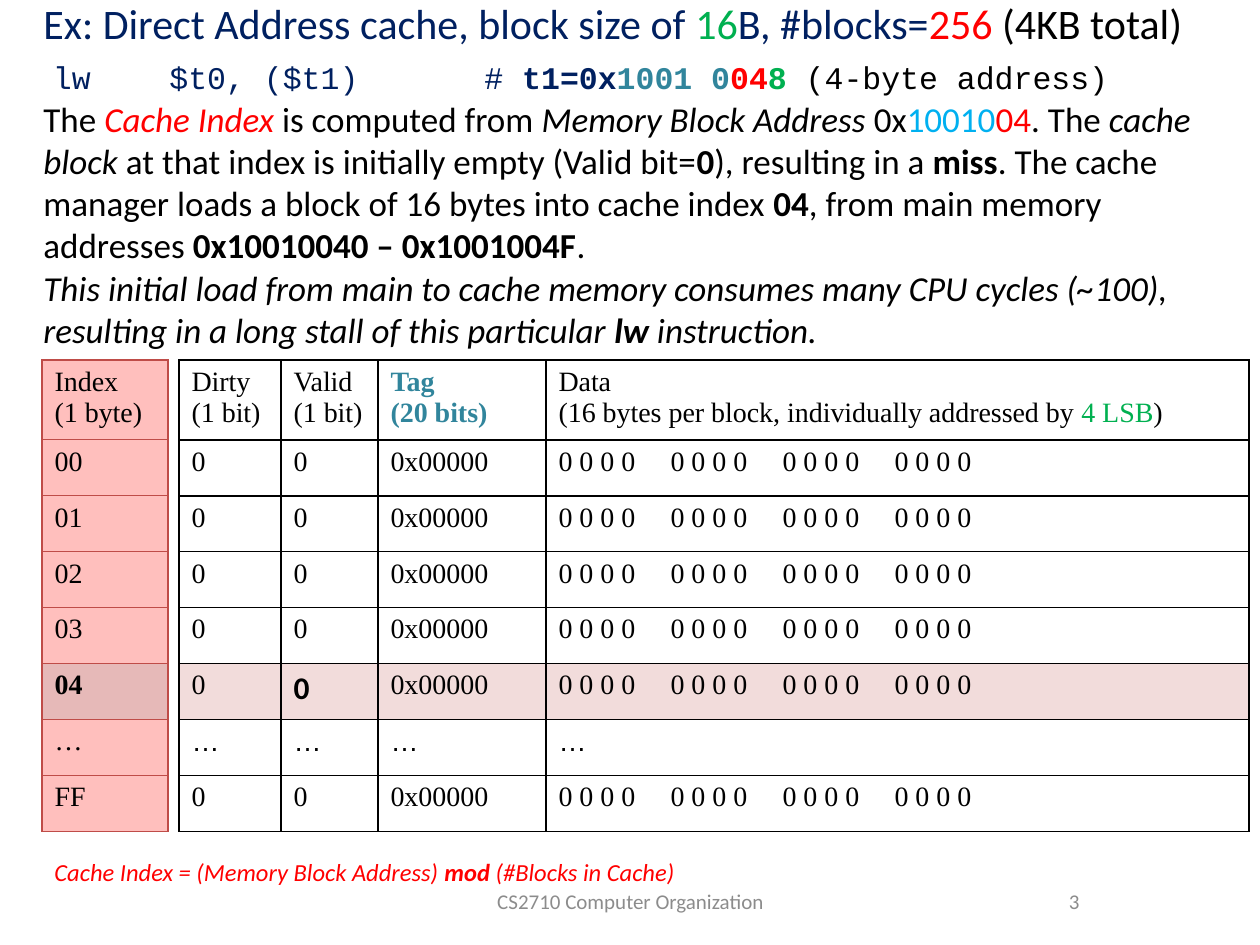
"""Build the slide about a direct address cache and its first miss."""
from lxml.etree import SubElement
from pptx import Presentation
from pptx.dml.color import RGBColor
from pptx.enum.text import MSO_ANCHOR, PP_ALIGN
from pptx.oxml.ns import qn
from pptx.util import Pt

COLORS = {
    "black": "000000", "navy": "002060", "green": "00B050", "red": "FF0000",
    "teal": "31859C", "sky": "00B0F0", "gray": "8C8C8C", "rose": "F2DCDB",
    "pink": "FFBFBD", "dusty": "E6B9B8", "brick": "BF4C48",
}
ROWS = ["00", "01", "02", "03", "04", "…", "FF"]
ROW_HEIGHTS = [75] + [56] * len(ROWS)
DATA = "\t".join(["0 0 0 0"] * 4)
GROUP_STEP = 112


def px(n):
    return round(n * 914400 / 126)


def rgb(name):
    return RGBColor.from_string(COLORS[name])


def add_text(p, text, size=16, font="Times New Roman", color="black", bold=False, italic=False):
    for i, line in enumerate(text.split("\n")):
        if i:
            p.add_line_break()
            SubElement(p._p[-1], qn("a:rPr"), sz=str(size * 100))
        if line:
            r = p.add_run()
            r.text = line
            r.font.size = Pt(size)
            r.font.name = font
            r.font.color.rgb = rgb(color)
            r.font.bold = bold
            r.font.italic = italic


def add_box(s, x, y, w, h, runs, align=PP_ALIGN.LEFT, anchor=MSO_ANCHOR.MIDDLE, wrap=True, **base):
    tf = s.shapes.add_textbox(px(x), px(y), px(w), px(h)).text_frame
    tf.word_wrap = wrap
    tf.vertical_anchor = anchor
    p = tf.paragraphs[0]
    p.alignment = align
    for text, fmt in runs:
        add_text(p, text, **{**base, **fmt})
    return tf


def add_tab_stops(p):
    tabs = SubElement(p._p.get_or_add_pPr(), qn("a:tabLst"))
    for i in range(1, 4):
        SubElement(tabs, qn("a:tab"), pos=str(px(i * GROUP_STEP)), algn="l")


def add_borders(cell, color, width):
    tc_pr = cell._tc.get_or_add_tcPr()
    for i, side in enumerate(("lnL", "lnR", "lnT", "lnB")):
        ln = tc_pr.makeelement(qn(f"a:{side}"), {"w": str(Pt(width))})
        SubElement(SubElement(ln, qn("a:solidFill")), qn("a:srgbClr"), val=COLORS[color])
        tc_pr.insert(i, ln)


def add_grid(s, x, y, widths, rows, fill, marked, border, line):
    """Add a table from rows of run lists; the row for index 04 gets the marked fill."""
    table = s.shapes.add_table(len(rows), len(widths), px(x), px(y),
                               px(sum(widths)), px(sum(ROW_HEIGHTS))).table
    table.first_row = table.horz_banding = False
    for col, w in zip(table.columns, widths):
        col.width = px(w)
    for i, (row, h) in enumerate(zip(rows, ROW_HEIGHTS)):
        table.rows[i].height = px(h)
        color = marked if i == ROWS.index("04") + 1 else fill
        for j, runs in enumerate(row):
            cell = table.cell(i, j)
            if color:
                cell.fill.solid()
                cell.fill.fore_color.rgb = rgb(color)
            else:
                cell.fill.background()
            add_borders(cell, border, line)
            p = cell.text_frame.paragraphs[0]
            if any("\t" in text for text, _ in runs):
                add_tab_stops(p)
            for text, fmt in runs:
                add_text(p, text, **fmt)


def add_explanation(s):
    code = {"size": 18, "font": "Courier New"}
    head = {"size": 24}
    red, navy = {"color": "red"}, {"color": "navy"}
    bold, italic = {"bold": True}, {"italic": True}
    tf = add_box(s, 31, 42, 1176, 305, [
        ("Ex: Direct Address cache, block size of ", head | navy),
        ("16", head | {"color": "green"}),
        ("B, #blocks=", head | navy),
        ("256 ", head | red),
        ("(4KB total)\n ", head),
        ("lw \t$t0, ($t1)\t\t# ", code | navy),
        ("t1=0x", code | navy | bold),
        ("1001 0", code | bold | {"color": "teal"}),
        ("04", code | bold | red),
        ("8 ", code | bold | {"color": "green"}),
        ("(4-byte address)\n", code),
        ("The ", {}),
        ("Cache Index ", red | italic),
        ("is computed from ", {}),
        ("Memory Block Address", italic),
        (" 0x", {}),
        ("10010", {"color": "sky"}),
        ("04", red),
        (". The ", {}),
        ("cache block", italic),
        (" at that index is initially empty (Valid bit=", {}),
        ("0", bold),
        ("), resulting in a ", {}),
        ("miss", bold),
        (". The cache manager loads a block of 16 bytes into cache index ", {}),
        ("04", bold),
        (", from main memory addresses ", {}),
        ("0x10010040 – 0x1001004F", bold),
        (".\n", {}),
        ("This initial load from main to cache memory consumes many CPU cycles (~100), "
         "resulting in a long stall of this particular ", italic),
        ("lw ", italic | bold),
        ("instruction.", italic),
    ], size=20, font="Calibri")
    tf.margin_bottom = px(48)


def cache_row(index):
    if index == "…":
        return [[("…", {"font": "Arial"})]] * 4
    valid = {"size": 18, "font": "Calibri", "bold": True} if index == "04" else {}
    return [[("0", {})], [("0", valid)], [("0x00000", {})], [(DATA, {})]]


def add_cache(s):
    header = [
        [("Dirty\n(1 bit)", {})],
        [("Valid\n(1 bit)", {})],
        [("Tag\n(20 bits)", {"color": "teal", "bold": True})],
        [("Data\n(16 bytes per block, individually addressed by ", {}),
         ("4 LSB", {"color": "green"}), (")", {})],
    ]
    add_grid(s, 179, 360, [102, 97, 168, 703], [header] + [cache_row(i) for i in ROWS],
             None, "rose", "black", 1)
    index_rows = [[[(i, {"bold": i == "04"})]] for i in ["Index\n(1 byte)"] + ROWS]
    add_grid(s, 42, 360, [126], index_rows, "pink", "dusty", "brick", 0.75)


def main():
    prs = Presentation()
    prs.slide_width, prs.slide_height = px(1260), px(945)
    s = prs.slides.add_slide(prs.slide_layouts[6])
    add_explanation(s)
    footer = {"size": 12, "font": "Calibri", "color": "gray"}
    add_box(s, 431, 876, 399, 50, [("CS2710 Computer Organization", footer)], PP_ALIGN.CENTER)
    add_box(s, 903, 876, 189, 50, [("3", footer)], PP_ALIGN.RIGHT)
    add_cache(s)
    add_box(s, 42, 851, 650, 43, [
        ("Cache Index = (Memory Block Address) ", {}),
        ("mod", {"bold": True}),
        (" (#Blocks in Cache)", {}),
    ], anchor=MSO_ANCHOR.TOP, wrap=False, size=14, font="Calibri", color="red", italic=True)
    prs.save("out.pptx")


if __name__ == "__main__":
    main()
